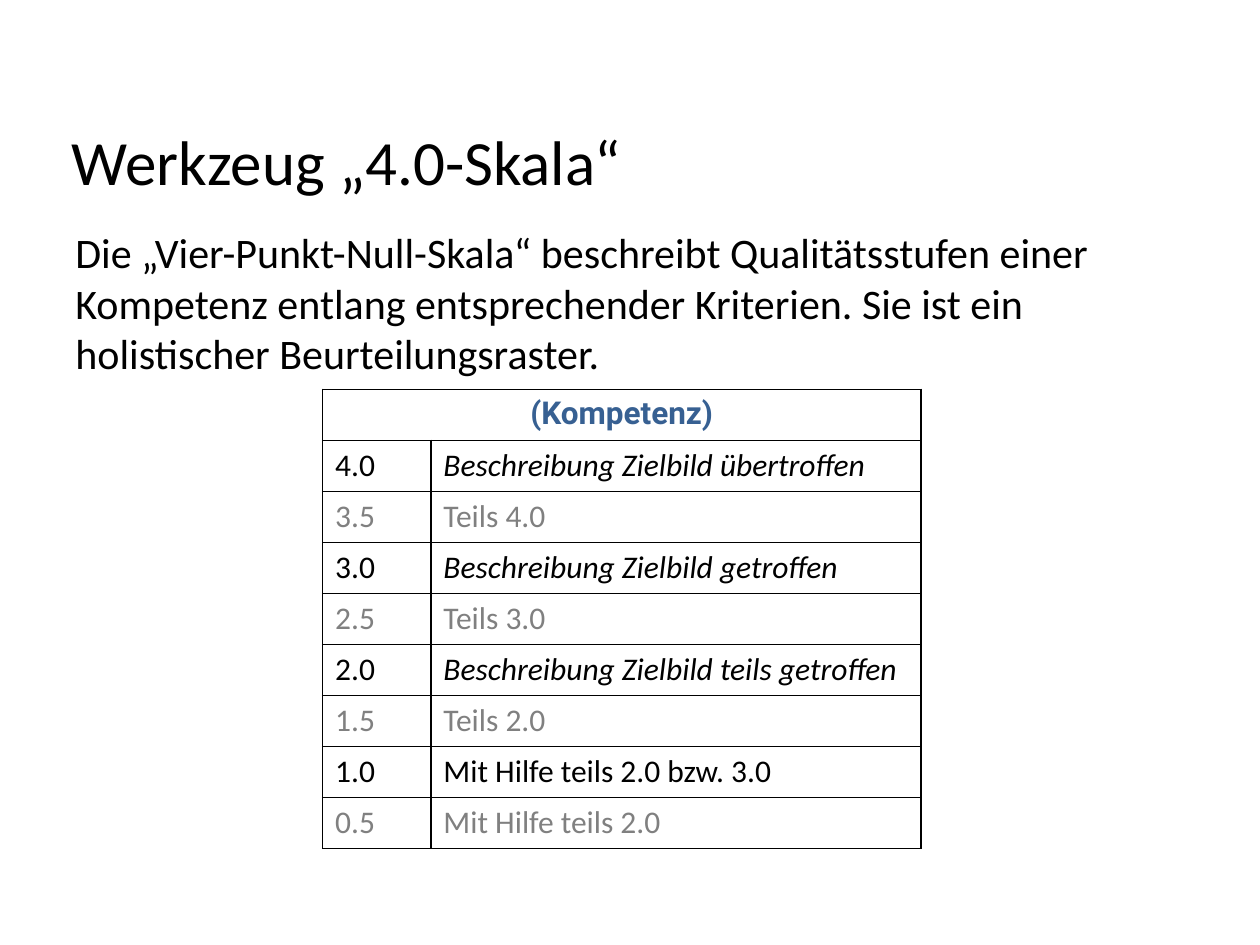
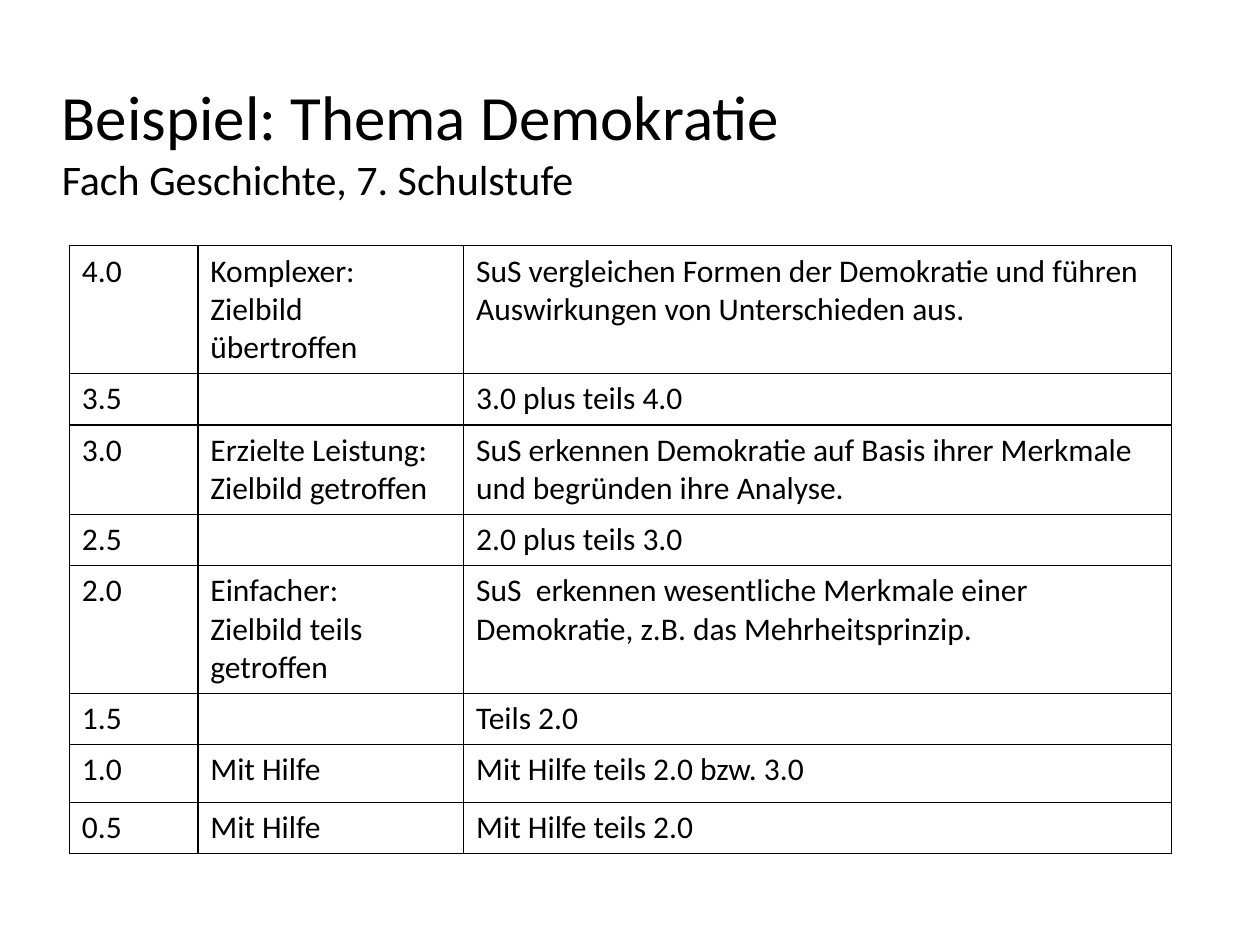
from lxml.etree import SubElement
from pptx import Presentation
from pptx.dml.color import RGBColor
from pptx.enum.text import MSO_ANCHOR, PP_ALIGN
from pptx.oxml.ns import qn
from pptx.util import Inches, Pt

BLACK = RGBColor(0x00, 0x00, 0x00)
GREY = RGBColor(0x80, 0x80, 0x80)
BLUE = RGBColor(0x37, 0x60, 0x92)
FONT = "Calibri"
HEADER_FONT = "Roboto"
ROW_H = 0.405


def add_run(p, text, size, color=BLACK, font=FONT, bold=False, italic=False):
    r = p.add_run()
    r.text = text
    r.font.size, r.font.name, r.font.color.rgb = Pt(size), font, color
    r.font.bold, r.font.italic = bold, italic


def add_grid(s, left, top, widths, heights):
    """Add an unfilled table with thin black borders on every cell."""
    frame = s.shapes.add_table(len(heights), len(widths), Inches(left), Inches(top),
                               Inches(sum(widths)), Inches(sum(heights)))
    table = frame.table
    table.first_row = table.horz_banding = False
    for col, width in zip(table.columns, widths):
        col.width = Inches(width)
    for row, height in zip(table.rows, heights):
        row.height = Inches(height)
    for cell in table.iter_cells():
        tcPr = cell._tc.get_or_add_tcPr()
        for side in ("a:lnL", "a:lnR", "a:lnT", "a:lnB"):
            ln = SubElement(tcPr, qn(side), w=str(Pt(1)))
            SubElement(SubElement(ln, qn("a:solidFill")), qn("a:srgbClr"), val=str(BLACK))
        cell.fill.background()
        cell.text_frame.paragraphs[0].font.size = Pt(18)
    return table


prs = Presentation()
prs.slide_width, prs.slide_height = Inches(10), Inches(7.5)

# Titles of both slides: box and lines with their sizes
titles = [
    ((0.47, 0.86, 6.8, 0.83), [("Werkzeug „4.0-Skala“", 36)]),
    ((0.39, 0.7, 7.11, 0.83), [("Beispiel: Thema Demokratie", 36),
                               ("Fach Geschichte, 7. Schulstufe", 24)]),
]
slides = []
for box, lines in titles:
    s = prs.slides.add_slide(prs.slide_layouts[5])
    title = s.shapes.title
    title.left, title.top, title.width, title.height = map(Inches, box)
    tf = title.text_frame
    tf.vertical_anchor = MSO_ANCHOR.MIDDLE
    p = tf.paragraphs[0]
    p.alignment = PP_ALIGN.LEFT
    for i, (text, size) in enumerate(lines):
        if i:
            p.add_line_break()
        add_run(p, text, size)
    slides.append(s)
scale_slide, example_slide = slides

# Slide 1: the scale
intro = scale_slide.shapes.add_textbox(Inches(0.5), Inches(1.75), Inches(9), Inches(1.3))
intro.text_frame.word_wrap = True
add_run(intro.text_frame.paragraphs[0],
        "Die „Vier-Punkt-Null-Skala“ beschreibt Qualitätsstufen einer Kompetenz entlang "
        "entsprechender Kriterien. Sie ist ein holistischer Beurteilungsraster.", 24)

levels = [
    ("4.0", "Beschreibung Zielbild übertroffen"),
    ("3.5", "Teils 4.0"),
    ("3.0", "Beschreibung Zielbild getroffen"),
    ("2.5", "Teils 3.0"),
    ("2.0", "Beschreibung Zielbild teils getroffen"),
    ("1.5", "Teils 2.0"),
    ("1.0", "Mit Hilfe teils 2.0 bzw. 3.0"),
    ("0.5", "Mit Hilfe teils 2.0"),
]
table = add_grid(scale_slide, 2.56, 3.09, [0.86, 3.89], [ROW_H] * (len(levels) + 1))
header = table.cell(0, 0)
header.merge(table.cell(0, 1))
p = header.text_frame.paragraphs[0]
p.alignment = PP_ALIGN.CENTER
add_run(p, "(Kompetenz)", 18, BLUE, HEADER_FONT, bold=True)
for i, (level, text) in enumerate(levels, start=1):
    color = GREY if level.endswith(".5") else BLACK
    add_run(table.cell(i, 0).text_frame.paragraphs[0], level, 18, color)
    add_run(table.cell(i, 1).text_frame.paragraphs[0], text, 18, color,
            italic=text.startswith("Beschreibung"))

# Slide 2: the scale applied to one topic
examples = [
    (1, "4.0", "Komplexer: Zielbild übertroffen",
     "SuS vergleichen Formen der Demokratie und führen Auswirkungen von Unterschieden aus."),
    (ROW_H, "3.5", "", "3.0 plus teils 4.0"),
    (0.7, "3.0", "Erzielte Leistung: Zielbild getroffen",
     "SuS erkennen Demokratie auf Basis ihrer Merkmale und begründen ihre Analyse."),
    (ROW_H, "2.5", "", "2.0 plus teils 3.0"),
    (1, "2.0", "Einfacher: \nZielbild teils getroffen",
     "SuS  erkennen wesentliche Merkmale einer Demokratie, z.B. das Mehrheitsprinzip."),
    (ROW_H, "1.5", "", "Teils 2.0"),
    (0.46, "1.0", "Mit Hilfe", "Mit Hilfe teils 2.0 bzw. 3.0"),
    (ROW_H, "0.5", "Mit Hilfe", "Mit Hilfe teils 2.0"),
]
table = add_grid(example_slide, 0.55, 1.95, [1.02, 2.11, 5.62], [row[0] for row in examples])
for row, (_, *texts) in zip(table.rows, examples):
    for cell, text in zip(row.cells, texts):
        p = cell.text_frame.paragraphs[0]
        for i, line in enumerate(text.split("\n") if text else []):
            if i:
                p.add_line_break()
            add_run(p, line, 18)

prs.save("out.pptx")
